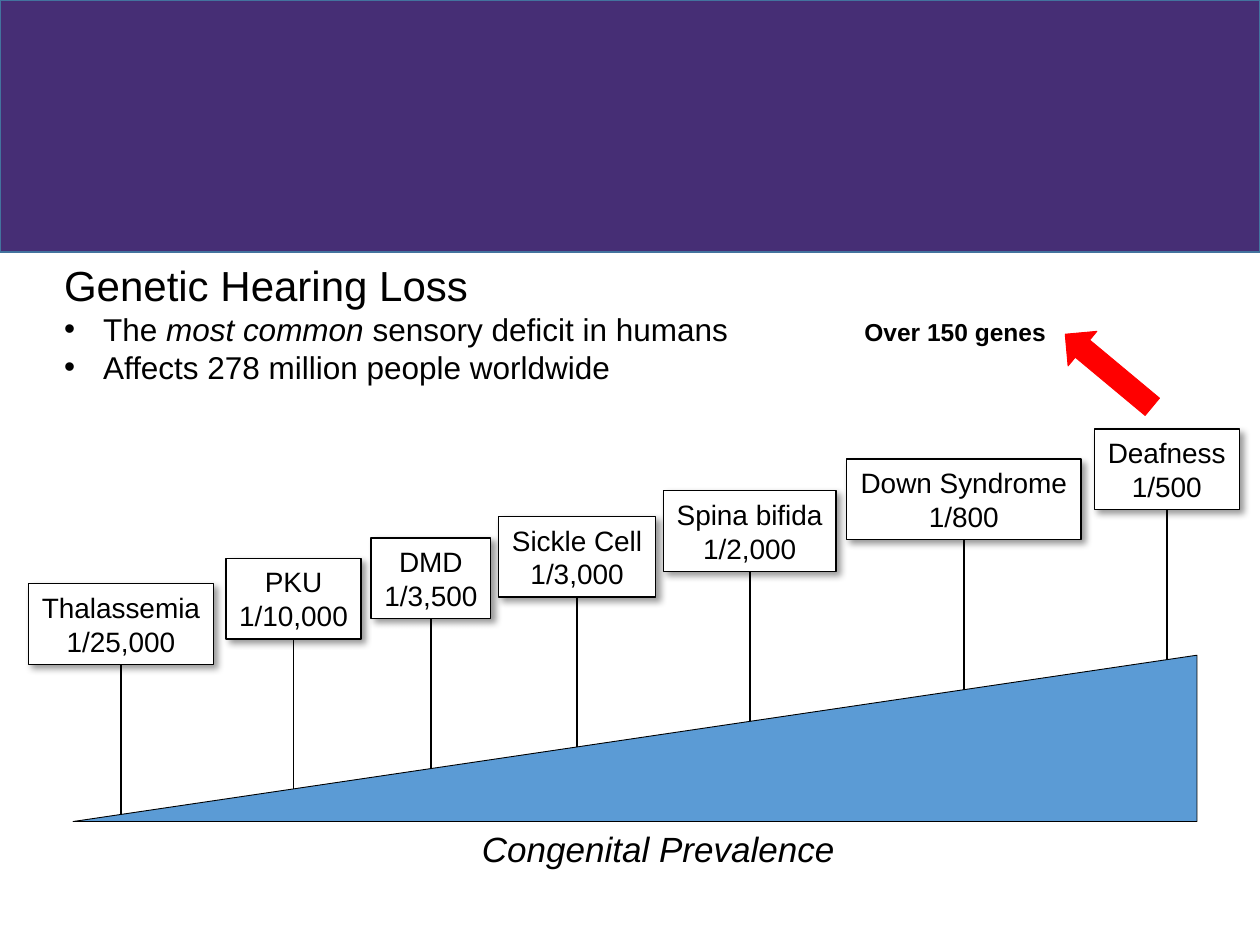
import pptx
import pptx.util
import pptx.dml.color
import pptx.enum.shapes
import pptx.enum.text
import pptx.oxml
import pptx.oxml.ns

KINDS = pptx.enum.shapes.MSO_SHAPE
ALIGN = pptx.enum.text.PP_ALIGN
FIT = pptx.enum.text.MSO_AUTO_SIZE
NS = pptx.oxml.ns.nsdecls("a")
HUES = {"band": "462E75", "edge": "43739E", "ramp": "5B9BD5",
        "ink": "000000", "paper": "FFFFFF", "arrow": "FF0000"}

# Grid of 100 columns by 75 rows
deck = pptx.Presentation()
deck.slide_width = pptx.util.Inches(10)
deck.slide_height = pptx.util.Inches(7.5)
COL, ROW = deck.slide_width / 100, deck.slide_height / 75

# Label centre, label width (columns), name, rate
CASES = [(9.6, 14.7, "Thalassemia", "1/25,000"),
         (23.3, 10.7, "PKU", "1/10,000"),
         (34.2, 9.5, "DMD", "1/3,500"),
         (45.8, 12.5, "Sickle Cell", "1/3,000"),
         (59.5, 13.7, "Spina bifida", "1/2,000"),
         (76.5, 18.6, "Down Syndrome", "1/800"),
         (92.6, 11.5, "Deafness", "1/500")]
TALL, STEM = 6.4, 11.9


def hue(name):
    return pptx.dml.color.RGBColor.from_string(HUES[name])


def spot(box):
    x, y, wide, high = box
    return [round(n) for n in (x * COL, y * ROW, wide * COL, high * ROW)]


def draw(slide, kind, box, fill, line, width):
    shape = slide.shapes.add_shape(kind, *spot(box))
    shape.shadow.inherit = False
    shape.fill.solid()
    shape.fill.fore_color.rgb = hue(fill)
    shape.line.color.rgb = hue(line)
    shape.line.width = pptx.util.Pt(width)
    return shape


def style(font, size, bold=False, italic=False):
    font.name = "Arial"
    font.size = pptx.util.Pt(size)
    font.bold, font.italic = bold, italic
    font.color.rgb = hue("ink")


def shade(shape):
    glow = shape._element.spPr.find(pptx.oxml.ns.qn("a:effectLst"))
    glow.append(pptx.oxml.parse_xml(
        f'<a:outerShdw {NS} blurRad="50800" dist="38100" dir="2700000" '
        f'algn="tl" rotWithShape="0"><a:srgbClr val="{HUES["ink"]}">'
        '<a:alpha val="40000"/></a:srgbClr></a:outerShdw>'))


def label(slide, box, lines):
    shape = draw(slide, KINDS.RECTANGLE, box, "paper", "ink", 0.75)
    shade(shape)
    frame = shape.text_frame
    frame.word_wrap = False
    frame.auto_size = FIT.SHAPE_TO_FIT_TEXT
    frame.text = "\n".join(lines)
    for para in frame.paragraphs:
        para.alignment = ALIGN.CENTER
        for run in para.runs:
            style(run.font, 16)
    return shape


def stem(slide, shape, x, foot):
    line = slide.shapes.add_connector(
        pptx.enum.shapes.MSO_CONNECTOR.STRAIGHT,
        round(x * COL), round(foot * ROW), round(x * COL), shape.top + shape.height)
    line.end_connect(shape, 2)
    line.line.color.rgb = hue("ink")
    line.line.width = pptx.util.Pt(1)
    line._element.spPr.append(pptx.oxml.parse_xml(f"<a:effectLst {NS}/>"))


def scale(slide, box):
    """Ramp with one label standing on its slope for each case."""
    left, top, wide, high = box
    ramp = draw(slide, KINDS.RIGHT_TRIANGLE, box, "ramp", "ink", 0.5)
    ramp._element.spPr.find(pptx.oxml.ns.qn("a:xfrm")).set("flipH", "1")
    for mid, span, name, rate in CASES:
        foot = top + high * (1 - (mid - left) / wide)
        place = (mid - span / 2, foot - STEM - TALL, span, TALL)
        stem(slide, label(slide, place, (name, rate)), mid, foot)


def note(slide, box, text, size, **looks):
    frame = slide.shapes.add_textbox(*spot(box)).text_frame
    frame.word_wrap = True
    frame.text = text
    para = frame.paragraphs[0]
    para.alignment = ALIGN.CENTER
    para.space_after = pptx.util.Pt(6)
    para._p.get_or_add_pPr().set("marL", str(pptx.util.Inches(0.44)))
    style(para.runs[0].font, size, **looks)


def intro(slide, box):
    """Heading with two bullets; odd parts of a line are italic."""
    frame = slide.shapes.add_textbox(*spot(box)).text_frame
    frame.word_wrap = False
    frame.auto_size = FIT.SHAPE_TO_FIT_TEXT
    frame.text = "Genetic Hearing Loss"
    style(frame.paragraphs[0].runs[0].font, 24)
    for parts in (("The ", "most common", " sensory deficit in humans"),
                  ("Affects 278 million people worldwide",)):
        para = frame.add_paragraph()
        props = para._p.get_or_add_pPr()
        gap = pptx.util.Inches(0.31)
        props.set("marL", str(gap))
        props.set("indent", str(-gap))
        props.append(pptx.oxml.parse_xml(f'<a:buFont {NS} typeface="Arial"/>'))
        props.append(pptx.oxml.parse_xml(f'<a:buChar {NS} char="•"/>'))
        for at, part in enumerate(parts):
            run = para.add_run()
            run.text = part
            style(run.font, 18, italic=at % 2 == 1)


def callout(slide, box):
    """Bold remark on the left, arrow pointing to it on the right."""
    left, top, wide, high = box
    note(slide, (left, top, 0.74 * wide, 0.77 * high), "Over 150 genes", 14, bold=True)
    arrow = draw(slide, KINDS.LEFT_ARROW,
                 (left + 0.7 * wide, top + 0.45 * high, 0.3 * wide, 0.55 * high),
                 "arrow", "arrow", 0.5)
    arrow.rotation = 39.8


def main():
    slide = deck.slides.add_slide(deck.slide_layouts[6])
    # Header band
    draw(slide, KINDS.RECTANGLE, (0, 0, 100, 20), "band", "edge", 1)
    # Prevalence scale and its caption
    scale(slide, (5.8, 52, 89.2, 13.2))
    note(slide, (28.1, 65.2, 43.9, 5), "Congenital Prevalence", 20, italic=True)
    # Heading, bullets and remark
    intro(slide, (4.1, 20.1, 55.2, 11.1))
    callout(slide, (62.5, 24.7, 30, 6.5))
    deck.save("out.pptx")


if __name__ == "__main__":
    main()
